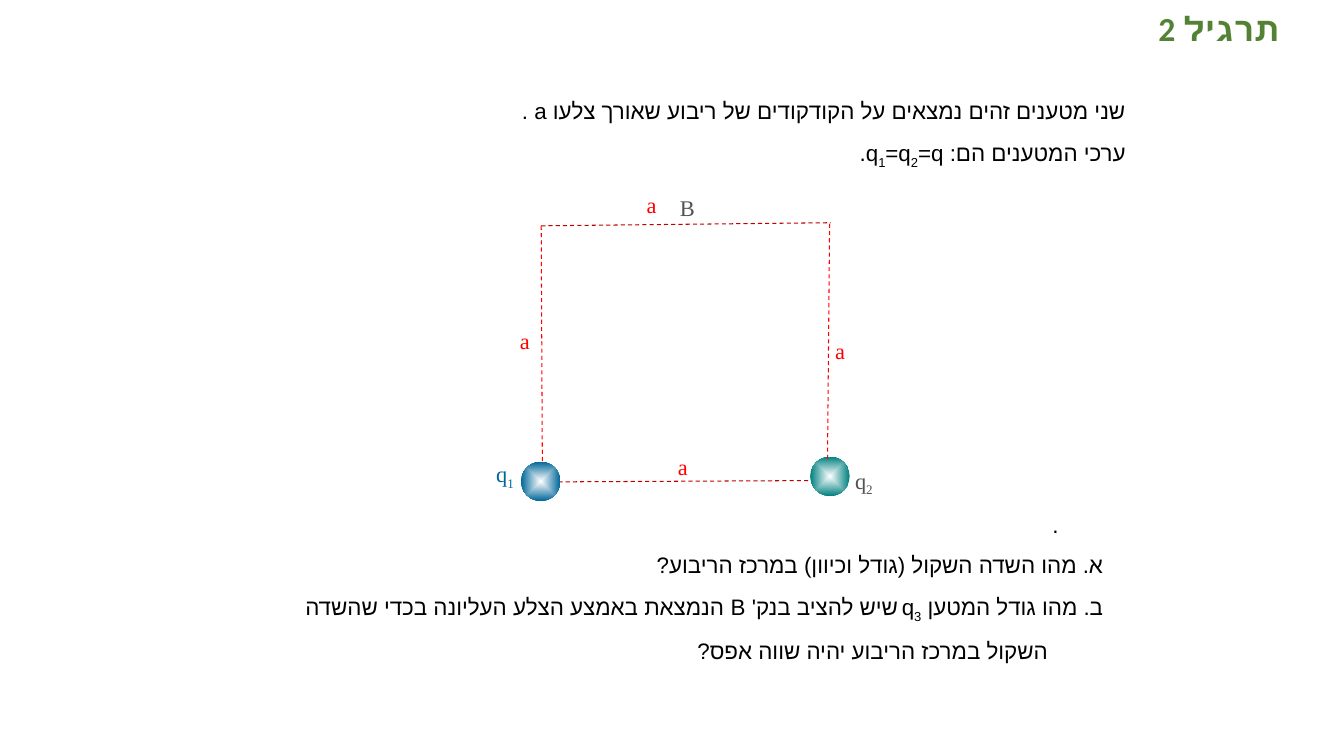
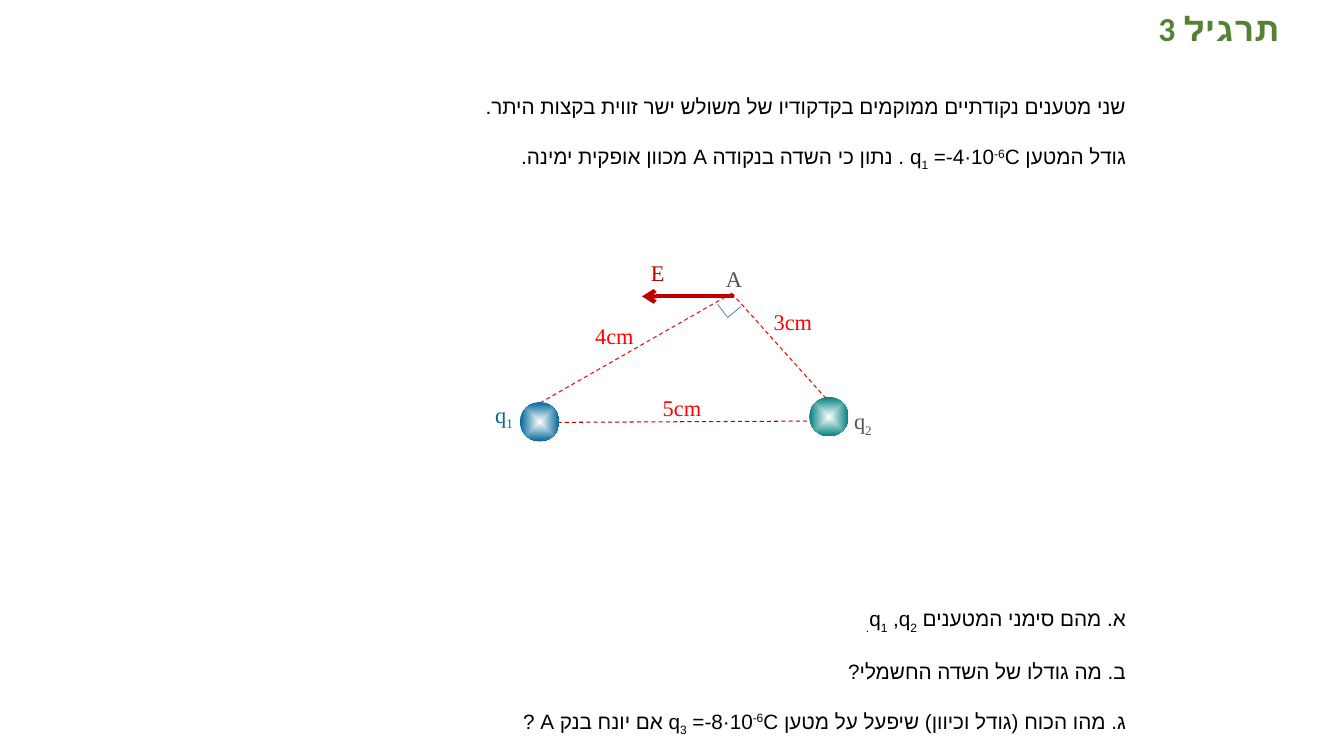
from dataclasses import dataclass

from lxml import etree
from pptx import Presentation
from pptx.dml.color import RGBColor
from pptx.enum.dml import MSO_LINE
from pptx.enum.shapes import MSO_CONNECTOR, MSO_SHAPE
from pptx.enum.text import MSO_ANCHOR, MSO_AUTO_SIZE, PP_ALIGN
from pptx.oxml.ns import qn
from pptx.util import Pt

STRAIGHT = MSO_CONNECTOR.STRAIGHT
OVAL = MSO_SHAPE.OVAL
DASH = MSO_LINE.DASH
TOP, MIDDLE = MSO_ANCHOR.TOP, MSO_ANCHOR.MIDDLE
RIGHT, CENTER = PP_ALIGN.RIGHT, PP_ALIGN.CENTER
NO_AUTOFIT = MSO_AUTO_SIZE.NONE
BASELINES = {"_": "-25000", "^": "30000"}


@dataclass(frozen=True)
class Theme:
    title: str = "548235"
    text: str = "000000"
    white: str = "FFFFFF"
    blue_charge: str = "006699"
    teal_charge: str = "008080"
    gray: str = "525252"
    red: str = "FF0000"
    dark_red: str = "C00000"
    angle: str = "4472C4"
    title_font: str = "Calibri"
    body_font: str = "Arial"
    label_font: str = "Times New Roman"
    title_size: float = 24
    label_size: float = 16
    charge_size: float = 28.1


@dataclass
class Item:
    """A body paragraph; hang is how far its later lines sit inside the first."""
    text: str
    before: float = 0
    indent: float = 0
    hang: float = 0


class Deck:
    def __init__(self, theme):
        self.theme = theme
        self.presentation = Presentation()
        self.presentation.slide_width = Pt(960)
        self.presentation.slide_height = Pt(540)
        self.slide = None

    def add_slide(self, title):
        layout = self.presentation.slide_layouts[1]
        self.slide = self.presentation.slides.add_slide(layout)
        shape = self.slide.shapes.title
        self.place(shape, 114.5, 7.9, 806.4, 28.1)
        frame = shape.text_frame
        frame.text = title
        frame.auto_size = NO_AUTOFIT
        frame.vertical_anchor = MIDDLE
        paragraph = frame.paragraphs[0]
        paragraph.alignment = RIGHT
        paragraph.line_spacing = 0.9
        self.style(paragraph.runs[0], self.theme.title_font,
                   self.theme.title_size, self.theme.title, True)

    @staticmethod
    def place(shape, left, top, width, height):
        shape.left, shape.top = Pt(left), Pt(top)
        shape.width, shape.height = Pt(width), Pt(height)

    @staticmethod
    def style(run, font, size, color, bold=False):
        run.font.name = font
        run.font.size = Pt(size)
        run.font.bold = bold
        run.font.color.rgb = RGBColor.from_string(color)
        properties = run.font._element
        etree.SubElement(properties, qn("a:cs")).set("typeface", font)

    def add_text(self, paragraph, text, font, size, color):
        """Add right-to-left text; |_x| is a subscript and |^x| a superscript."""
        paragraph._p.get_or_add_pPr().set("rtl", "1")
        for piece in text.split("|"):
            run = paragraph.add_run()
            baseline = BASELINES.get(piece[:1])
            run.text = piece[1:] if baseline else piece
            self.style(run, font, size, color)
            if baseline:
                run.font._element.set("baseline", baseline)

    def body(self, items, size, line_spacing):
        shape = self.slide.placeholders[1]
        self.place(shape, 162.7, 56.2, 648.7, 470)
        frame = shape.text_frame
        frame.word_wrap = True
        frame.auto_size = NO_AUTOFIT
        frame.vertical_anchor = TOP
        for index, item in enumerate(items):
            paragraph = frame.add_paragraph() if index else frame.paragraphs[0]
            paragraph.alignment = RIGHT
            paragraph.line_spacing = line_spacing
            paragraph.space_before = Pt(item.before)
            properties = paragraph._p.get_or_add_pPr()
            properties.set("marL", str(Pt(item.indent + item.hang)))
            properties.set("indent", str(Pt(-item.hang)))
            etree.SubElement(properties, qn("a:buNone"))
            self.add_text(paragraph, item.text, self.theme.body_font, size,
                          self.theme.text)

    def label(self, text, center, top, color):
        box = self.slide.shapes.add_textbox(Pt(center - 30), Pt(top), Pt(60), Pt(31))
        box.text_frame.word_wrap = True
        paragraph = box.text_frame.paragraphs[0]
        paragraph.alignment = CENTER
        self.add_text(paragraph, text, self.theme.label_font,
                      self.theme.label_size, color)

    def line(self, start, end, color, width=0.75, dash=DASH, arrow=False):
        connector = self.slide.shapes.add_connector(
            STRAIGHT, *(Pt(value) for value in (*start, *end)))
        connector.line.color.rgb = RGBColor.from_string(color)
        connector.line.width = Pt(width)
        if dash:
            connector.line.dash_style = dash
        if arrow:
            outline = connector.line._get_or_add_ln()
            etree.SubElement(outline, qn("a:tailEnd")).set("type", "arrow")
        etree.SubElement(connector._element.spPr, qn("a:effectLst"))

    def charge(self, left, top, color):
        """Draw a ball that fades from a white centre to its colour."""
        size = Pt(self.theme.charge_size)
        ball = self.slide.shapes.add_shape(OVAL, Pt(left), Pt(top), size, size)
        ball.shadow.inherit = False
        ball.line.fill.background()
        ball.fill.gradient()
        colors = (self.theme.white, color)
        for position, (stop, shade) in enumerate(zip(ball.fill.gradient_stops, colors)):
            stop.position = position
            stop.color.rgb = RGBColor.from_string(shade)
        gradient = ball._element.spPr.find(qn("a:gradFill"))
        linear = gradient.find(qn("a:lin"))
        radial = etree.Element(qn("a:path"))
        radial.set("path", "shape")
        center = etree.SubElement(radial, qn("a:fillToRect"))
        for side in "ltrb":
            center.set(side, "50000")
        gradient.replace(linear, radial)

    def charge_pair(self, left, top):
        """Draw q1 and q2 with their labels and the dashed line between them."""
        theme = self.theme
        self.line((left + 26.7, top + 14.4), (left + 221.1, top + 13.4),
                  theme.dark_red)
        self.charge(left, top, theme.blue_charge)
        self.charge(left + 206.6, top - 3.6, theme.teal_charge)
        self.label("q|_1", left - 11.5, top - 4.6, theme.blue_charge)
        self.label("q|_2", left + 244.8, top, theme.gray)


def add_square_exercise(deck):
    theme = deck.theme
    deck.add_slide("תרגיל 2")
    deck.body([
        Item("שני מטענים זהים נמצאים על הקודקודים של ריבוע שאורך צלעו a ."),
        Item("ערכי המטענים הם: q|_1|=q|_2|=q."),
        Item(".", before=234, indent=48),
        Item("א. מהו השדה השקול (גודל וכיוון) במרכז הריבוע?", indent=16),
        Item("ב. מהו גודל המטען q|_3 |שיש להציב בנק' B הנמצאת באמצע הצלע העליונה "
             "בכדי שהשדה השקול במרכז הריבוע יהיה שווה אפס?", indent=16, hang=39.5),
    ], size=16, line_spacing=1.5)

    deck.charge_pair(372.2, 329.8)
    top_left = (386.6, 161.3)
    deck.line(top_left, (387.4, 330.5), theme.red)
    deck.line((592.6, 159.8), (591.1, 328.3), theme.red)
    deck.line(top_left, (593.3, 159.1), theme.dark_red)
    for center, top in ((465.5, 133.2), (374.8, 230.4), (600.1, 237.6), (487.8, 320.4)):
        deck.label("a", center, top, theme.red)
    deck.label("B", 491, 135.4, theme.gray)


def add_triangle_exercise(deck):
    theme = deck.theme
    deck.add_slide("תרגיל 3")
    deck.body([
        Item("שני מטענים נקודתיים ממוקמים בקדקודיו של משולש ישר זווית בקצות היתר.",
             before=10),
        Item("גודל המטען q|_1| =-4·10|^-6|C . נתון כי השדה בנקודה A מכוון אופקית ימינה.",
             before=10),
        Item("א. מהם סימני המטענים q|_1| ,q|_2.", before=302),
        Item("ב. מה גודלו של השדה החשמלי?", before=10),
        Item("ג. מהו הכוח (גודל וכיוון) שיפעל על מטען q|_3| =-8·10|^-6|C אם יונח בנק A ?",
             before=10),
    ], size=14.8, line_spacing=1.4)

    deck.charge_pair(371.5, 287.3)
    apex = (522.7, 209.5)
    deck.line(apex, (386.6, 287.3), theme.red)
    deck.line(apex, (591.1, 285.8), theme.red)
    deck.line((524.2, 211.7), (458.6, 211.7), theme.dark_red, 3, None, arrow=True)
    corner = (519.8, 226.8)
    for end in ((512.6, 217.4), (529.2, 218.9)):
        deck.line(corner, end, theme.angle, 0.5, None)
    for text, center, top, color in (
            ("A", 524.2, 185.8, theme.gray), ("E", 469.8, 181.4, theme.dark_red),
            ("3cm", 566.3, 216.7, theme.red), ("4cm", 438.8, 226.8, theme.red),
            ("5cm", 487.1, 277.9, theme.red)):
        deck.label(text, center, top, color)


def main():
    deck = Deck(Theme())
    add_square_exercise(deck)
    add_triangle_exercise(deck)
    deck.presentation.save("out.pptx")


if __name__ == "__main__":
    main()
